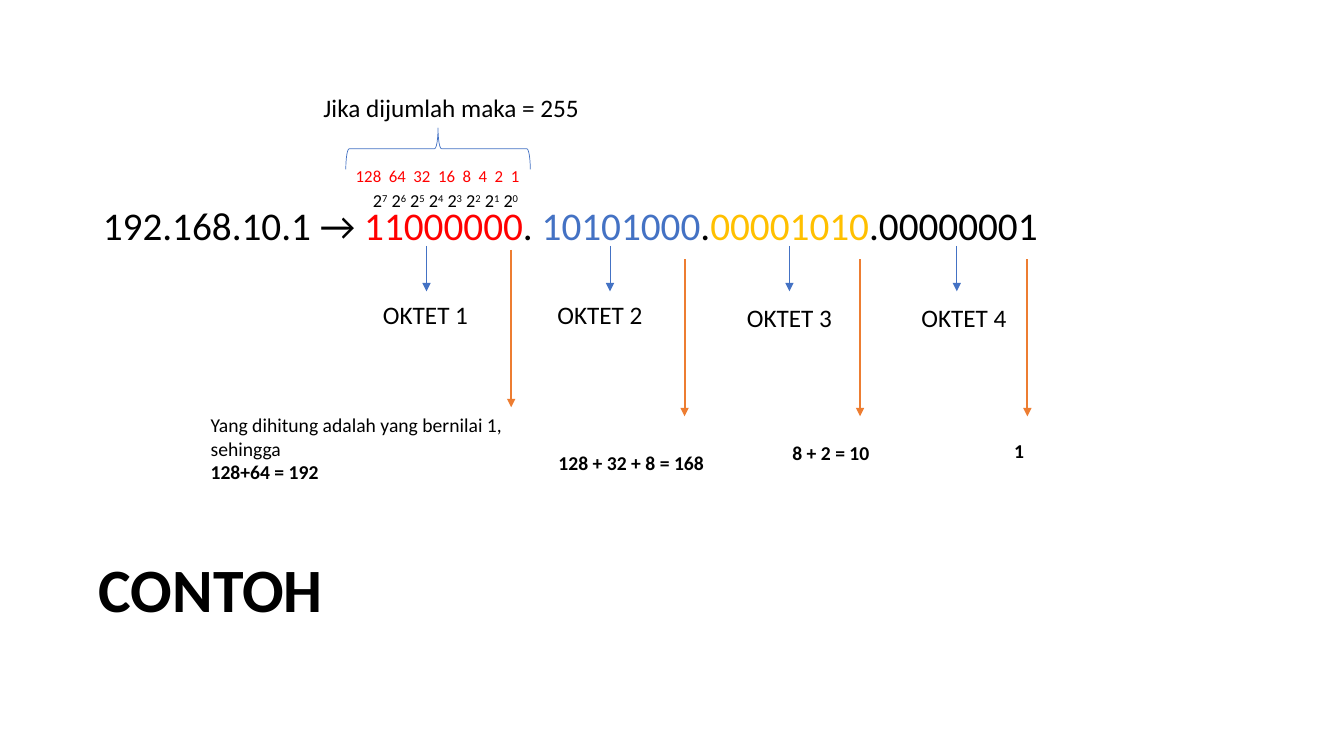
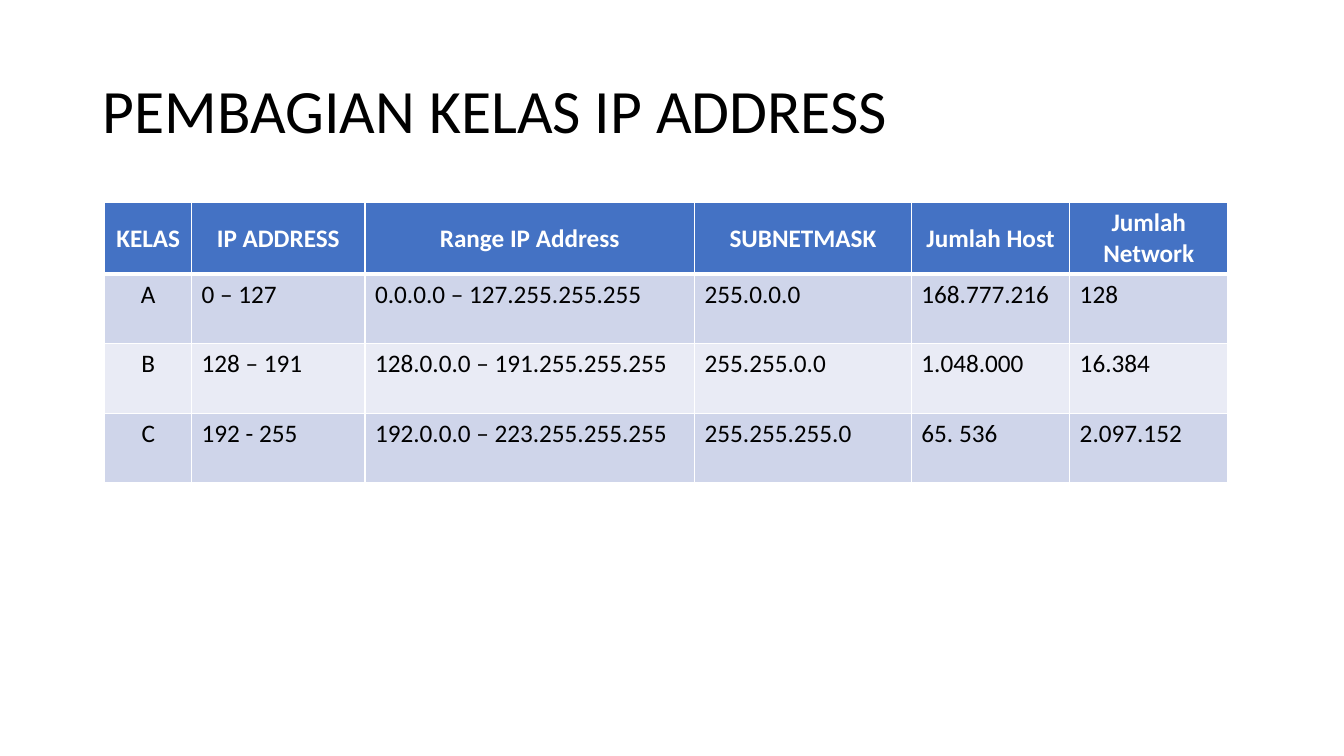
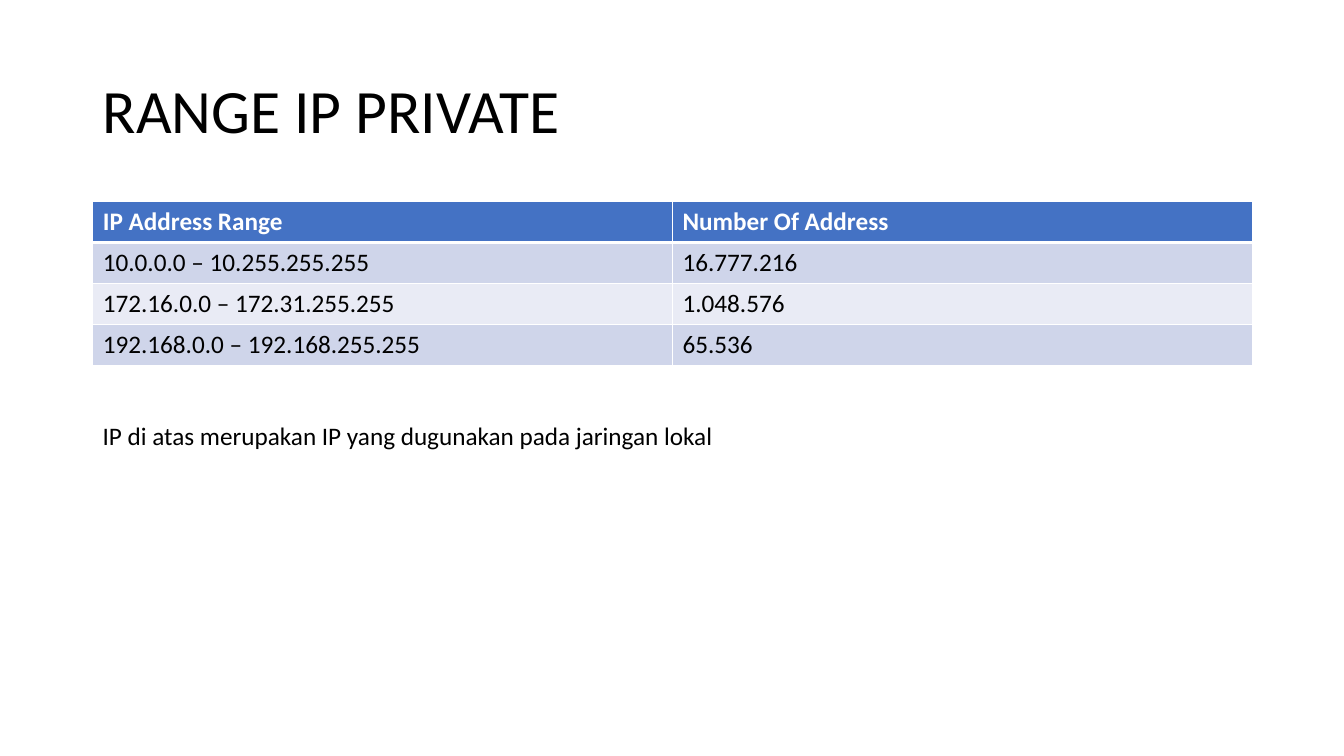
from dataclasses import dataclass

from pptx import Presentation
from pptx.dml.color import RGBColor
from pptx.enum.shapes import MSO_CONNECTOR, MSO_SHAPE
from pptx.enum.text import MSO_ANCHOR, MSO_AUTO_SIZE, PP_ALIGN
from pptx.oxml.ns import qn
from pptx.util import Emu, Pt
from lxml.etree import SubElement

SCALE = 9144
FONT = "Calibri"
BLACK, WHITE, RED = "000000", "FFFFFF", "FF0000"
BLUE, GOLD, ORANGE = "4472C4", "FFC000", "ED7D31"
BANDS = ("CFD5EA", "E9EBF5")
HEAD = (92, 40, 1150, 145)


@dataclass
class Bit:
    """A run of text that may differ from its neighbours."""

    text: str
    color: str | None = None
    bold: bool | None = None
    raised: bool = False


@dataclass
class Octet:
    """One octet: its short arrow, label, long arrow and sum."""

    stem: int
    label: tuple[int, int]
    drop: tuple[int, int]
    box: tuple[int, int, int, int]
    lines: list


OCTETS = [
    Octet(423, (370, 292), (507, 248), (199, 405, 335, 81),
          ["Yang dihitung adalah yang bernilai 1, sehingga",
           [Bit("128+64 = 192", bold=True)]]),
    Octet(605, (543, 292), (679, 257), (544, 442, 255, 34),
          [[Bit("128 + 32 + 8 = 168", bold=True)]]),
    Octet(783, (731, 295), (853, 257), (776, 433, 255, 34),
          [[Bit("8 + 2 = 10", bold=True)]]),
    Octet(949, (904, 295), (1019, 257), (996, 431, 128, 34),
          [[Bit("1", bold=True)]]),
]

ADDRESS = [
    Bit("192.168.10.1 → "), Bit("11000000", RED), Bit(". "),
    Bit("10101000", BLUE), Bit("."), Bit("00001010", GOLD), Bit(".00000001"),
]

CLASSES = [
    ["KELAS", "IP ADDRESS", "Range IP Address", "SUBNETMASK",
     "Jumlah Host", "Jumlah Network"],
    ["A", "0 – 127", "0.0.0.0 – 127.255.255.255", "255.0.0.0",
     "168.777.216", "128"],
    ["B", "128 – 191", "128.0.0.0 – 191.255.255.255", "255.255.0.0",
     "1.048.000", "16.384"],
    ["C", "192 - 255", "192.0.0.0 – 223.255.255.255", "255.255.255.0",
     "65. 536", "2.097.152"],
]

RANGES = [
    ["IP Address Range", "Number Of Address"],
    ["10.0.0.0 – 10.255.255.255", "16.777.216"],
    ["172.16.0.0 – 172.31.255.255", "1.048.576"],
    ["192.168.0.0 – 192.168.255.255", "65.536"],
]


def px(*sizes: int) -> list[Emu]:
    """Turn px lengths into EMU."""
    return [Emu(size * SCALE) for size in sizes]


def paint(code: str) -> RGBColor:
    """Turn a hex string into a colour."""
    return RGBColor.from_string(code)


def write(frame, lines, *, size=18, color=BLACK, bold=False,
          align=PP_ALIGN.LEFT, lead=None, gap=None) -> None:
    """Fill a text frame with lines, each a string or a list of bits."""
    frame.word_wrap = True
    for row, line in enumerate(lines):
        para = frame.paragraphs[0] if row == 0 else frame.add_paragraph()
        para.alignment = align
        if lead:
            para.line_spacing = lead
        if gap is not None:
            para.space_before = Pt(gap)
        for bit in [Bit(line)] if isinstance(line, str) else line:
            run = para.add_run()
            run.text = bit.text
            font = run.font
            font.name, font.size = FONT, Pt(size)
            font.bold = bold if bit.bold is None else bit.bold
            font.color.rgb = paint(bit.color or color)
            if bit.raised:
                run._r.get_or_add_rPr().set("baseline", "30000")


def place(shape, box) -> None:
    """Move and size a placeholder."""
    shape.left, shape.top, shape.width, shape.height = px(*box)
    shape.text_frame.auto_size = MSO_AUTO_SIZE.NONE


def head(slide, text: str, box=HEAD, bold=False) -> None:
    """Set the slide title."""
    title = slide.shapes.title
    place(title, box)
    title.text_frame.vertical_anchor = MSO_ANCHOR.MIDDLE
    write(title.text_frame, [text], size=44, bold=bold, lead=0.9)


def note(slide, box, lines, **style) -> None:
    """Add a text box."""
    write(slide.shapes.add_textbox(*px(*box)).text_frame, lines, **style)


def arrow(slide, x: int, top: int, span: int, color: str, width: float) -> None:
    """Draw an arrow that points down."""
    link = slide.shapes.add_connector(
        MSO_CONNECTOR.STRAIGHT, *px(x, top, x, top + span))
    link.line.color.rgb = paint(color)
    link.line.width = Pt(width)
    SubElement(link.line._get_or_add_ln(), qn("a:tailEnd"), type="triangle")
    SubElement(link._element.spPr, qn("a:effectLst"))


def edge(cell, side: str, width: float) -> None:
    """Draw one white border of a cell."""
    line = SubElement(cell._tc.get_or_add_tcPr(), qn(f"a:ln{side}"),
                      w=str(Pt(width)))
    fill = SubElement(line, qn("a:solidFill"))
    SubElement(fill, qn("a:srgbClr"), val=WHITE)


def grid(slide, at, cols, tall: int, rows, mid=False) -> None:
    """Add a banded table; mid centres its header and first column."""
    size = (sum(cols), tall * len(rows))
    table = slide.shapes.add_table(
        len(rows), len(cols), *px(*at, *size)).table
    for col, wide in zip(table.columns, px(*cols)):
        col.width = wide
    for r, row in enumerate(rows):
        table.rows[r].height = px(tall)[0]
        top = r == 0
        for c, text in enumerate(row):
            cell = table.cell(r, c)
            for side in "LRTB":
                thick = (r, side) in ((0, "B"), (1, "T"))
                edge(cell, side, 3 if thick else 1)
            cell.fill.solid()
            cell.fill.fore_color.rgb = paint(BLUE if top else BANDS[(r - 1) % 2])
            if mid and top:
                cell.vertical_anchor = MSO_ANCHOR.MIDDLE
            center = mid and (top or c == 0)
            write(cell.text_frame, [text], bold=top,
                  color=WHITE if top else BLACK,
                  align=PP_ALIGN.CENTER if center else PP_ALIGN.LEFT)


def sample(deck) -> None:
    """Build the worked example of an address in binary."""
    slide = deck.slides.add_slide(deck.slide_layouts[1])
    head(slide, "CONTOH", (88, 545, 1150, 85), bold=True)
    body = slide.placeholders[1]
    place(body, (92, 200, 1150, 320))
    write(body.text_frame, [ADDRESS], size=28, lead=0.9, gap=10)
    props = body.text_frame.paragraphs[0]._p.get_or_add_pPr()
    props.set("marL", "0")
    props.set("indent", "0")
    SubElement(props, qn("a:buNone"))

    for num, octet in enumerate(OCTETS, 1):
        arrow(slide, octet.stem, 244, 45, BLUE, 0.5)
        note(slide, (*octet.label, 110, 40), [f"OKTET {num}"])
        arrow(slide, *octet.drop, 156, ORANGE, 1.5)
        note(slide, octet.box, octet.lines, size=14)

    bits = range(7, -1, -1)
    note(slide, (343, 160, 285, 30),
         ["  ".join(str(2 ** n) for n in bits)], size=12, color=RED)
    powers = [bit for n in bits
              for bit in (Bit("2" if n == 7 else " 2"), Bit(str(n), raised=True))]
    note(slide, (360, 183, 288, 32), [powers], size=13)

    brace = slide.shapes.add_shape(
        MSO_SHAPE.RIGHT_BRACE, *px(414, 56, 41, 183))
    brace.rotation = 270
    brace.shadow.inherit = False
    brace.fill.background()
    brace.line.color.rgb = paint(BLUE)
    brace.line.width = Pt(0.5)
    note(slide, (311, 87, 285, 40), ["Jika dijumlah maka = 255"])


def main() -> None:
    """Build and save the deck."""
    deck = Presentation()
    deck.slide_width, deck.slide_height = px(1333, 750)
    sample(deck)

    plain = deck.slide_layouts[5]
    slide = deck.slides.add_slide(plain)
    head(slide, "PEMBAGIAN KELAS IP ADDRESS")
    grid(slide, (104, 201), (86, 172, 327, 215, 157, 157), 69, CLASSES, mid=True)

    slide = deck.slides.add_slide(plain)
    head(slide, "RANGE IP PRIVATE")
    grid(slide, (92, 200), (575, 575), 40, RANGES)
    note(slide, (92, 412, 861, 40),
         ["IP di atas merupakan IP yang dugunakan pada jaringan lokal"])
    deck.save("out.pptx")


if __name__ == "__main__":
    main()
